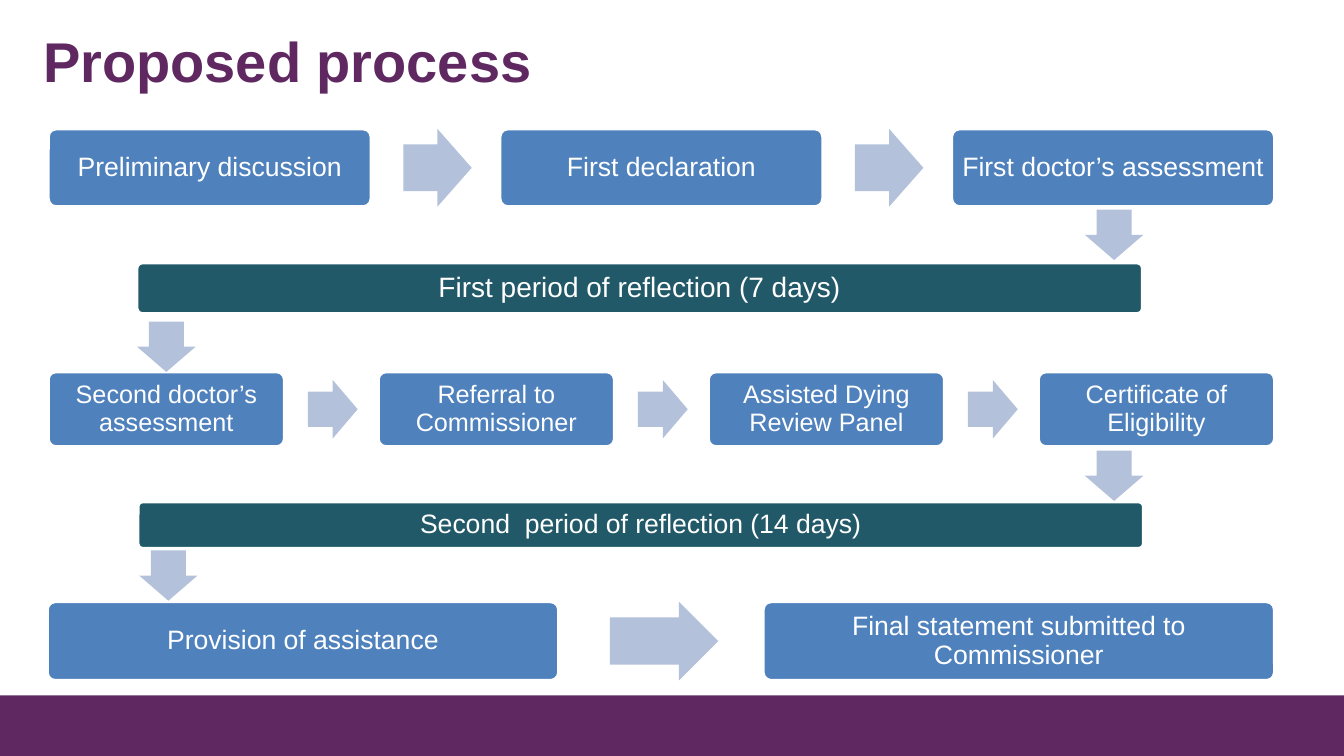
"""Build the slide showing the proposed process as a flow chart."""
from dataclasses import dataclass

from pptx import Presentation
from pptx.dml.color import RGBColor
from pptx.enum.shapes import MSO_SHAPE
from pptx.enum.text import MSO_ANCHOR, PP_ALIGN
from pptx.shapes.autoshape import Shape
from pptx.slide import Slide
from pptx.util import Inches, Pt

RECT = MSO_SHAPE.RECTANGLE
ROUND = MSO_SHAPE.ROUNDED_RECTANGLE
RIGHT = MSO_SHAPE.RIGHT_ARROW
DOWN = MSO_SHAPE.DOWN_ARROW
MIDDLE = MSO_ANCHOR.MIDDLE
CENTER = PP_ALIGN.CENTER

FONT = "Arial"
PLUM, BLUE, TEAL, PALE, WHITE = "5F2861", "4F81BD", "215968", "B3C1DB", "FFFFFF"
EDGE = 12.64


@dataclass
class Area:
    left: float
    top: float
    width: float
    height: float


@dataclass
class Row:
    first: Area
    head: float
    size: int
    steps: list[str]


@dataclass
class Pause:
    area: Area
    size: int
    text: str


ROWS = [
    Row(Area(0.48, 1.28, 3.2, 0.77), 0.77, 19,
        ["Preliminary discussion", "First declaration", "First doctor’s assessment"]),
    Row(Area(0.48, 3.69, 2.34, 0.74), 0.58, 18,
        ["Second doctor’s assessment", "Referral to Commissioner",
         "Assisted Dying Review Panel", "Certificate of Eligibility"]),
    Row(Area(0.47, 5.97, 5.07, 0.78), 0.78, 19,
        ["Provision of assistance", "Final statement submitted to Commissioner"]),
]
PAUSES = [
    Pause(Area(1.36, 2.61, 9.97, 0.5), 20, "First period of reflection (7 days)"),
    Pause(Area(1.37, 4.98, 9.97, 0.46), 19, "Second  period of reflection (14 days)"),
]
DROPS = [(10.76, 2.08), (1.36, 3.19), (10.76, 4.47), (1.38, 5.46)]


def color(code: str) -> RGBColor:
    return RGBColor.from_string(code)


def draw(slide: Slide, kind: MSO_SHAPE, area: Area, fill: str) -> Shape:
    shape = slide.shapes.add_shape(kind, Inches(area.left), Inches(area.top),
                                   Inches(area.width), Inches(area.height))
    shape.shadow.inherit = False
    shape.fill.solid()
    shape.fill.fore_color.rgb = color(fill)
    shape.line.fill.background()
    return shape


def arrow(slide: Slide, kind: MSO_SHAPE, area: Area) -> None:
    shape = draw(slide, kind, area, PALE)
    shape.adjustments[0] = 0.6
    shape.adjustments[1] = 0.5


def box(slide: Slide, area: Area, fill: str, text: str, size: int) -> None:
    shape = draw(slide, ROUND, area, fill)
    shape.adjustments[0] = 0.1
    shape.line.color.rgb = color(WHITE)
    shape.line.width = Pt(2)
    frame = shape.text_frame
    frame.word_wrap = True
    frame.vertical_anchor = MIDDLE
    frame.margin_left = frame.margin_right = Inches(0.07)
    frame.margin_top = frame.margin_bottom = Inches(0.07)
    para = frame.paragraphs[0]
    para.text = text
    para.alignment = CENTER
    para.line_spacing = 0.9
    para.font.name = FONT
    para.font.size = Pt(size)
    para.font.color.rgb = color(WHITE)


def chain(slide: Slide, row: Row) -> None:
    first = row.first
    pitch = (EDGE - first.left - first.width) / (len(row.steps) - 1)
    gap = pitch - first.width
    for i, step in enumerate(row.steps):
        left = first.left + i * pitch
        box(slide, Area(left, first.top, first.width, first.height), BLUE, step, row.size)
        if i < len(row.steps) - 1:
            top = first.top + (first.height - row.head) / 2
            start = left + first.width + gap / 4
            arrow(slide, RIGHT, Area(start, top, 0.53 * gap, row.head))


def title(slide: Slide, text: str) -> None:
    frame = slide.shapes.add_textbox(Inches(0.33), Inches(0.21),
                                     Inches(12.18), Inches(0.77)).text_frame
    frame.word_wrap = True
    para = frame.paragraphs[0]
    para.text = text
    para.font.name = FONT
    para.font.size = Pt(40)
    para.font.bold = True
    para.font.color.rgb = color(PLUM)


def main() -> None:
    deck = Presentation()
    deck.slide_width = Inches(13.33)
    deck.slide_height = Inches(7.5)
    slide = deck.slides.add_slide(deck.slide_layouts[6])
    draw(slide, RECT, Area(0, 6.9, 13.33, 0.6), PLUM)
    title(slide, "Proposed process")
    for row in ROWS:
        chain(slide, row)
    for pause in PAUSES:
        box(slide, pause.area, TEAL, pause.text, pause.size)
    for left, top in DROPS:
        arrow(slide, DOWN, Area(left, top, 0.58, 0.5))
    deck.save("out.pptx")


if __name__ == "__main__":
    main()
